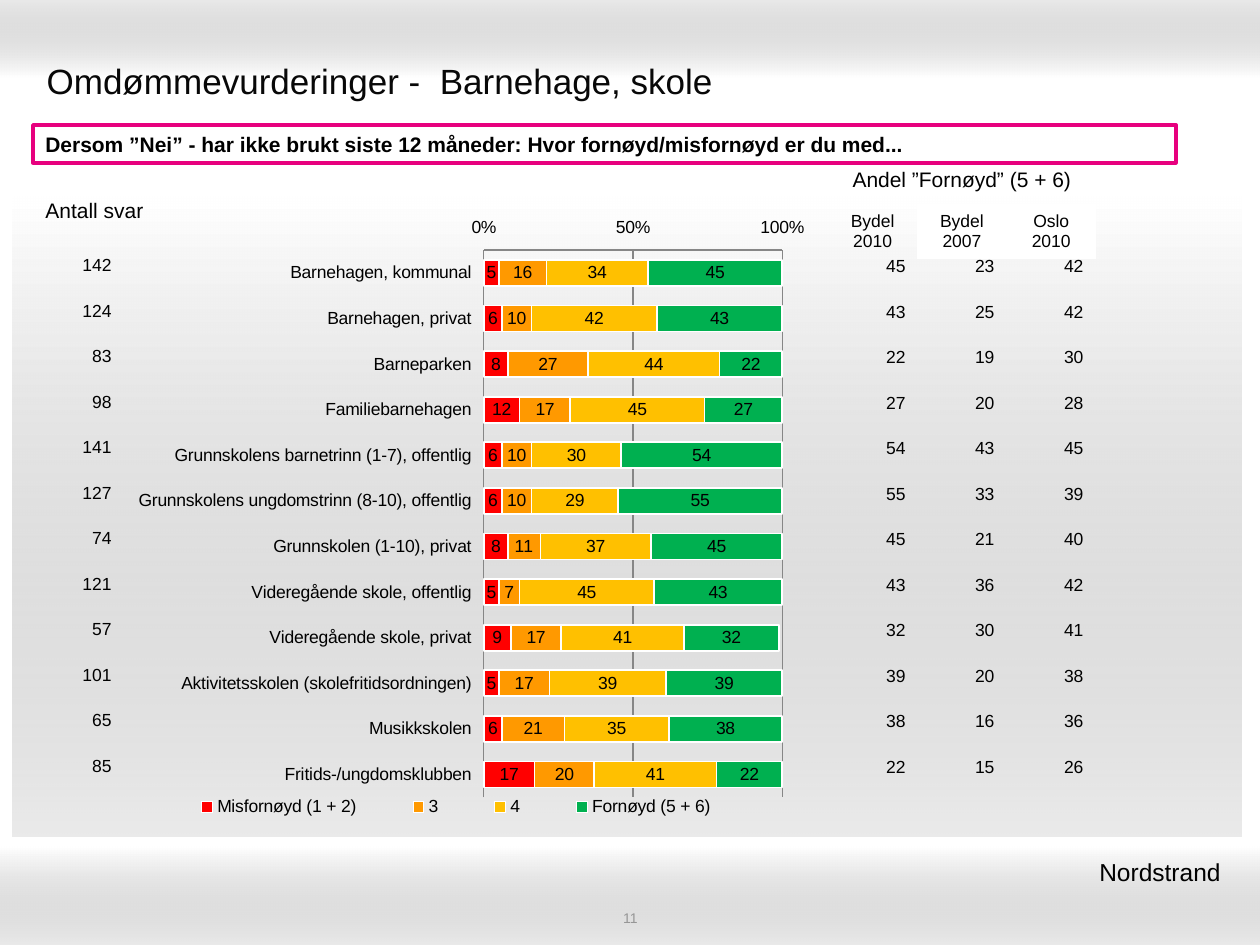
"""Builds the reputation slide for kindergartens and schools in Nordstrand."""
from lxml import etree
from pptx import Presentation, util as u
from pptx.chart.data import CategoryChartData
from pptx.dml.color import RGBColor
from pptx.enum import chart as ch, shapes, text
from pptx.oxml import ns, parse_xml

SCALE = 914400 / 126
COLORS = dict(black="000000", title="080808", white="FFFFFF", shade="999999", pink="E7007E",
              page="969696", grid="868686", red="FF0000", orange="FF9900", yellow="FFC000", green="00B050")
NO_STYLE = "{2D5ABB26-0587-4C30-8999-92F81FD0307C}"
LEFT, CENTER, RIGHT = text.PP_ALIGN.LEFT, text.PP_ALIGN.CENTER, text.PP_ALIGN.RIGHT
TOP, MIDDLE = text.MSO_ANCHOR.TOP, text.MSO_ANCHOR.MIDDLE

ROWS = [
    ("Barnehagen, kommunal", 142, (5, 16, 34, 45), (45, 23, 42)),
    ("Barnehagen, privat", 124, (6, 10, 42, 43), (43, 25, 42)),
    ("Barneparken", 83, (8, 27, 44, 22), (22, 19, 30)),
    ("Familiebarnehagen", 98, (12, 17, 45, 27), (27, 20, 28)),
    ("Grunnskolens barnetrinn (1-7), offentlig", 141, (6, 10, 30, 54), (54, 43, 45)),
    ("Grunnskolens ungdomstrinn (8-10), offentlig", 127, (6, 10, 29, 55), (55, 33, 39)),
    ("Grunnskolen (1-10), privat", 74, (8, 11, 37, 45), (45, 21, 40)),
    ("Videregående skole, offentlig", 121, (5, 7, 45, 43), (43, 36, 42)),
    ("Videregående skole, privat", 57, (9, 17, 41, 32), (32, 30, 41)),
    ("Aktivitetsskolen (skolefritidsordningen)", 101, (5, 17, 39, 39), (39, 20, 38)),
    ("Musikkskolen", 65, (6, 21, 35, 38), (38, 16, 36)),
    ("Fritids-/ungdomsklubben", 85, (17, 20, 41, 22), (22, 15, 26)),
]
SERIES = [("Misfornøyd (1 + 2)", "red"), ("3", "orange"), ("4", "yellow"), ("Fornøyd (5 + 6)", "green")]


def px(n):
    return u.Emu(round(n * SCALE))


def rgb(name):
    return RGBColor.from_string(COLORS[name])


def write(tf, content, size=10, color="black", bold=False, align=LEFT, font="Arial"):
    for i, line in enumerate(content.split("\n")):
        p = tf.add_paragraph() if i else tf.paragraphs[0]
        p.alignment = align
        r = p.add_run()
        r.text = line
        r.font.name, r.font.size, r.font.bold = font, u.Pt(size), bold
        r.font.color.rgb = rgb(color)


def place(element, x, y, w, h, inner=False):
    target = '<c:layoutTarget val="inner"/>' if inner else ""
    values = "".join(f'<c:{k} val="{v}"/>' for k, v in zip("xywh", (x, y, w, h)))
    layout = parse_xml(f'<c:layout {ns.nsdecls("c")}><c:manualLayout>{target}<c:xMode val="edge"/>'
                       f'<c:yMode val="edge"/>{values}</c:manualLayout></c:layout>')
    for old in element.findall(ns.qn("c:layout")):
        element.remove(old)
    element.insert(1 if element.tag == ns.qn("c:legend") else 0, layout)


class Deck:
    def __init__(self, prs):
        self.prs = prs
        self.s = prs.slides.add_slide(prs.slide_layouts[5])

    def band(self, x, y, w, h, angle):
        sp = self.s.shapes.add_shape(shapes.MSO_SHAPE.RECTANGLE, px(x), px(y), px(w), px(h))
        sp.shadow.inherit = False
        sp.line.fill.background()
        sp.fill.gradient()
        sp.fill.gradient_angle = angle
        for stop, color, position in zip(sp.fill.gradient_stops, ("white", "shade"), (0, 1)):
            stop.color.rgb, stop.position = rgb(color), position
        last = sp._element.spPr.findall(".//" + ns.qn("a:srgbClr"))[-1]
        etree.SubElement(last, ns.qn("a:alpha"), val="20000")

    def title(self, x, y, w, h, content):
        sp = self.s.shapes.title
        sp.left, sp.top, sp.width, sp.height = px(x), px(y), px(w), px(h)
        self.s.shapes._spTree.append(sp._element)
        sp.text_frame.vertical_anchor = MIDDLE
        write(sp.text_frame, content, size=20, color="title")

    def text(self, x, y, w, h, content, anchor=TOP, margin=None, **style):
        tf = self.s.shapes.add_textbox(px(x), px(y), px(w), px(h)).text_frame
        tf.word_wrap, tf.vertical_anchor = True, anchor
        if margin is not None:
            tf.margin_left = tf.margin_right = tf.margin_top = tf.margin_bottom = px(margin)
        write(tf, content, **style)

    def box(self, x, y, w, h, content, **style):
        sp = self.s.shapes.add_shape(shapes.MSO_SHAPE.RECTANGLE, px(x), px(y), px(w), px(h))
        sp.shadow.inherit = False
        sp.fill.solid()
        sp.fill.fore_color.rgb = rgb("white")
        sp.line.color.rgb, sp.line.width = rgb("pink"), u.Pt(2)
        sp.text_frame.word_wrap, sp.text_frame.vertical_anchor = True, TOP
        write(sp.text_frame, content, **style)

    def table(self, x, y, w, h, rows, filled=(), merged=False, **style):
        n, m = len(rows), len(rows[0])
        table = self.s.shapes.add_table(n, m, px(x), px(y), px(w), px(h)).table
        table.first_row = table.horz_banding = False
        table._tbl.tblPr.find(ns.qn("a:tableStyleId")).text = NO_STYLE
        if merged:
            table.cell(0, 0).merge(table.cell(0, m - 1))
        for i, row in enumerate(rows):
            for j, value in enumerate(row):
                cell = table.cell(i, j)
                cell.vertical_anchor = MIDDLE
                if (i, j) in filled:
                    cell.fill.solid()
                    cell.fill.fore_color.rgb = rgb("white")
                else:
                    cell.fill.background()
                if not cell.is_spanned:
                    size = 12 if merged and i == 0 else style.get("size", 10)
                    write(cell.text_frame, str(value), **{**style, "size": size})

    def chart(self, x, y, w, h, rows, series):
        data = CategoryChartData()
        data.categories = [row[0] for row in rows]
        for i, (name, _) in enumerate(series):
            data.add_series(name, [row[2][i] for row in rows])
        chart = self.s.shapes.add_chart(ch.XL_CHART_TYPE.BAR_STACKED, px(x), px(y), px(w), px(h), data).chart
        chart.font.name, chart.font.size, chart.font.color.rgb = "Arial", u.Pt(10), rgb("black")
        chart.has_title = False
        plot = chart.plots[0]
        plot.gap_width, plot.overlap, plot.vary_by_categories = 75, 100, False
        for bar, (_, color) in zip(plot.series, series):
            bar.format.fill.solid()
            bar.format.fill.fore_color.rgb = rgb(color)
            bar.format.line.color.rgb, bar.format.line.width = rgb("white"), u.Pt(1)
            labels = bar.data_labels
            labels.show_value, labels.number_format, labels.number_format_is_linked = True, "0", False
        cats, vals = chart.category_axis, chart.value_axis
        cats.reverse_order = True
        cats.major_tick_mark = ch.XL_TICK_MARK.NONE
        vals.major_tick_mark = ch.XL_TICK_MARK.INSIDE
        vals.minimum_scale, vals.maximum_scale, vals.major_unit = 0, 100, 50
        vals.tick_labels.number_format, vals.tick_labels.number_format_is_linked = r"General\%", False
        vals.has_major_gridlines = True
        for axis in (cats, vals):
            axis.tick_label_position = ch.XL_TICK_LABEL_POSITION.LOW
            axis.format.line.color.rgb = rgb("grid")
        vals.major_gridlines.format.line.color.rgb = rgb("grid")
        chart.has_legend = True
        chart.legend.position = ch.XL_LEGEND_POSITION.BOTTOM
        chart.legend.include_in_layout = False
        place(chart._chartSpace.chart.plotArea, 0.52, 0.07, 0.43, 0.85, inner=True)
        place(chart.legend._element, 0.04, 0.91, 0.88, 0.05)


def main():
    prs = Presentation()
    prs.slide_width, prs.slide_height = px(1260), px(945)
    deck = Deck(prs)
    deck.band(0, 0, 1260, 78, 90)
    deck.band(0, 847, 1260, 98, 270)
    deck.band(13, 197, 1228, 640, 270)
    deck.title(34, 45, 1191, 70, "Omdømmevurderinger -  Barnehage, skole")
    deck.text(431, 909, 399, 18, "11", anchor=MIDDLE, margin=0, size=8, color="page", align=CENTER)
    deck.box(33, 125, 1143, 38, "Dersom ”Nei” - har ikke brukt siste 12 måneder: Hvor fornøyd/misfornøyd er du med...",
             size=12, bold=True)
    deck.chart(123, 205, 694, 644, ROWS, SERIES)
    heads = [["Andel ”Fornøyd” (5 + 6)", "", ""], ["Bydel\n2010", "Bydel\n2007", "Oslo\n2010"]]
    deck.table(828, 156, 268, 96, heads, filled=((1, 1), (1, 2)), merged=True, align=CENTER)
    deck.table(5, 174, 179, 74, [["Antall svar"]], size=12, align=CENTER)
    deck.text(769, 851, 471, 43, "Nordstrand ", size=14, align=RIGHT)
    deck.table(829, 244, 267, 546, [row[3] for row in ROWS], align=RIGHT)
    deck.table(35, 243, 89, 546, [[row[1]] for row in ROWS], align=RIGHT)
    prs.save("out.pptx")


if __name__ == "__main__":
    main()
